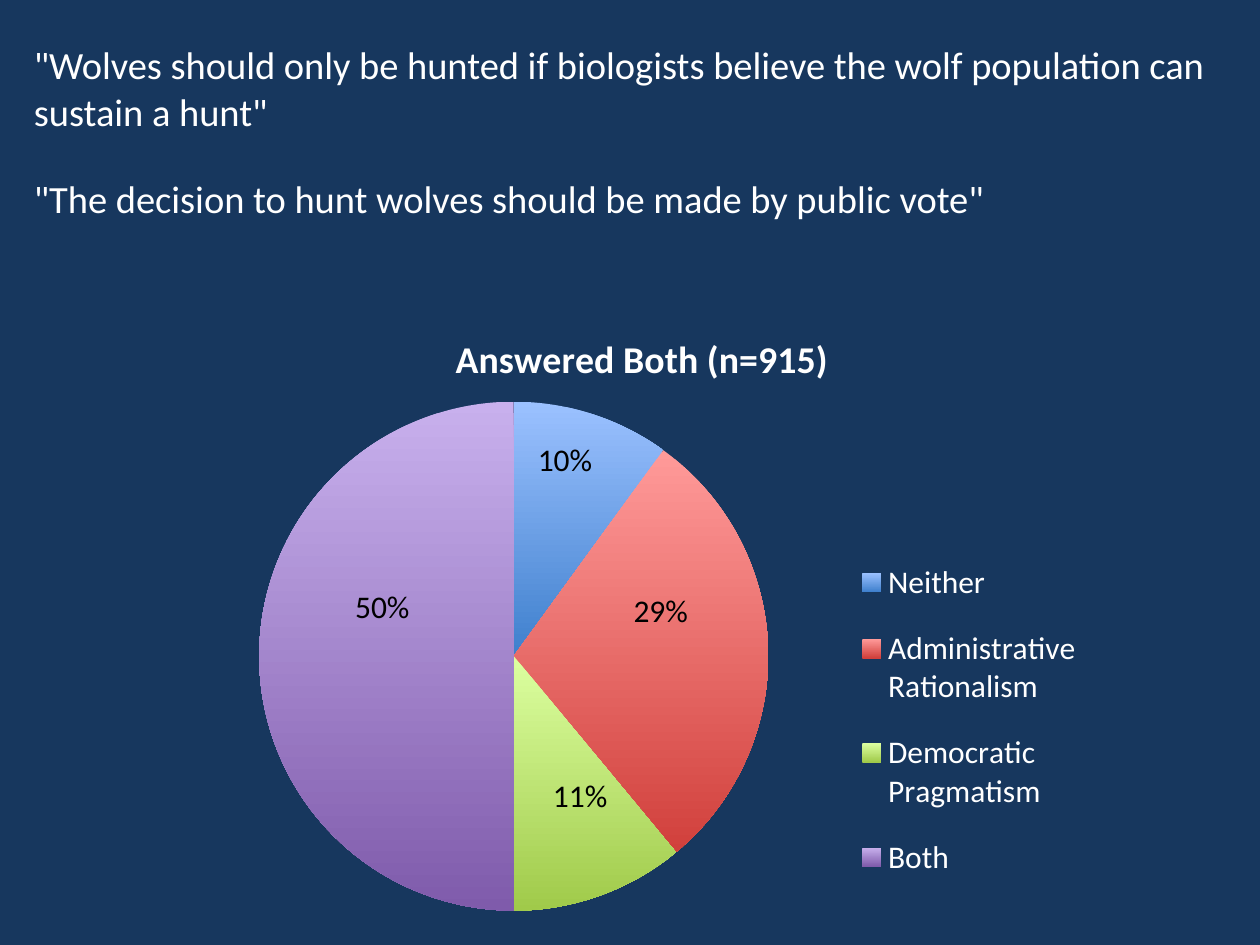
from lxml import etree
from pptx import Presentation
from pptx.chart.data import CategoryChartData
from pptx.dml.color import RGBColor
from pptx.enum import chart as ch, text as tx
from pptx.oxml import ns
from pptx.util import Pt

NAVY = RGBColor(0x17, 0x37, 0x5E)
WHITE = RGBColor(0xFF, 0xFF, 0xFF)
BLACK = RGBColor(0, 0, 0)
FONT = "Calibri"

STATEMENTS = [  # text, top, width, height, wraps
    ('"Wolves should only be hunted if biologists believe the wolf population can sustain a hunt"',
     20.16, 697.68, 60.48, True),
    ('"The decision to hunt wolves should be made by public vote"',
     96.48, 565.2, 33.84, False),
]
CHART_TITLE = "Answered Both (n=915)"
ANSWERS = [  # category, percent, gradient top, gradient bottom, label left, label top
    ("Neither", 10, RGBColor(0x9B, 0xC1, 0xFF), RGBColor(0x3F, 0x80, 0xCD), 300.24, 247.68),
    ("Administrative Rationalism", 29, RGBColor(0xFF, 0x9A, 0x99), RGBColor(0xD1, 0x40, 0x3C), 354.96, 334.08),
    ("Democratic Pragmatism", 11, RGBColor(0xDC, 0xFF, 0xA0), RGBColor(0xA0, 0xCA, 0x4A), 308.88, 439.92),
    ("Both", 50, RGBColor(0xC8, 0xB0, 0xED), RGBColor(0x7F, 0x5B, 0xAB), 195.84, 331.92),
]


def style_font(font, size, color, bold=False):
    font.name, font.size, font.bold = FONT, Pt(size), bold
    font.color.rgb = color


def add_text(slide, content, box, size, color, wrap=False):
    frame = slide.shapes.add_textbox(*map(Pt, box)).text_frame
    frame.word_wrap = wrap
    frame.auto_size = tx.MSO_AUTO_SIZE.SHAPE_TO_FIT_TEXT
    run = frame.paragraphs[0].add_run()
    run.text = content
    style_font(run.font, size, color)


def place(element, before, **settings):
    """Give a chart part a manual layout, in fractions of the chart."""
    for old in element.findall(ns.qn("c:layout")):
        element.remove(old)
    layout = etree.Element(ns.qn("c:layout"))
    manual = etree.SubElement(layout, ns.qn("c:manualLayout"))
    for name, value in settings.items():
        etree.SubElement(manual, ns.qn(f"c:{name}")).set("val", str(value))
    element.find(ns.qn(before)).addprevious(layout)


def add_pie(slide):
    data = CategoryChartData()
    data.categories = [answer[0] for answer in ANSWERS]
    data.add_series(CHART_TITLE, [answer[1] for answer in ANSWERS])
    chart = slide.shapes.add_chart(
        ch.XL_CHART_TYPE.PIE, Pt(79.2), Pt(167.76), Pt(571.68), Pt(363.6), data).chart
    style_font(chart.font, 18, BLACK)

    chart.has_title = True
    run = chart.chart_title.text_frame.paragraphs[0].add_run()
    run.text = CHART_TITLE
    style_font(run.font, 21.6, WHITE, bold=True)
    chart.chart_title.include_in_layout = False

    chart.has_legend = True
    legend = chart.legend
    legend.position = ch.XL_LEGEND_POSITION.RIGHT
    legend.include_in_layout = False
    style_font(legend.font, 18, WHITE)

    plot = chart.plots[0]
    plot.vary_by_categories = True
    for index, (_, _, top_color, bottom_color, _, _) in enumerate(ANSWERS):
        fill = plot.series[0].points[index].format.fill
        fill.gradient()
        fill.gradient_angle = 270
        for stop, color in zip(fill.gradient_stops, (top_color, bottom_color)):
            stop.color.rgb = color

    edges = {"xMode": "edge", "yMode": "edge"}
    place(chart.chart_title._element, "c:overlay", **edges, x=0.31, y=0.05)
    place(legend._element, "c:overlay", **edges, x=0.68, y=0.38, w=0.3, h=0.58)
    plot_area = chart._chartSpace.chart.plotArea
    place(plot_area, "c:pieChart", layoutTarget="inner", **edges, x=0.12, y=0.17, w=0.51, h=0.8)


def main():
    presentation = Presentation()
    presentation.slide_width, presentation.slide_height = Pt(720), Pt(540)
    slide = presentation.slides.add_slide(presentation.slide_layouts[6])
    slide.background.fill.solid()
    slide.background.fill.fore_color.rgb = NAVY

    for content, top, width, height, wrap in STATEMENTS:
        add_text(slide, content, (12.24, top, width, height), 22, WHITE, wrap)
    add_pie(slide)
    for _, percent, _, _, left, top in ANSWERS:
        add_text(slide, f"{percent}%", (left, top, 46.08, 28.8), 18, BLACK)

    presentation.save("out.pptx")


if __name__ == "__main__":
    main()
